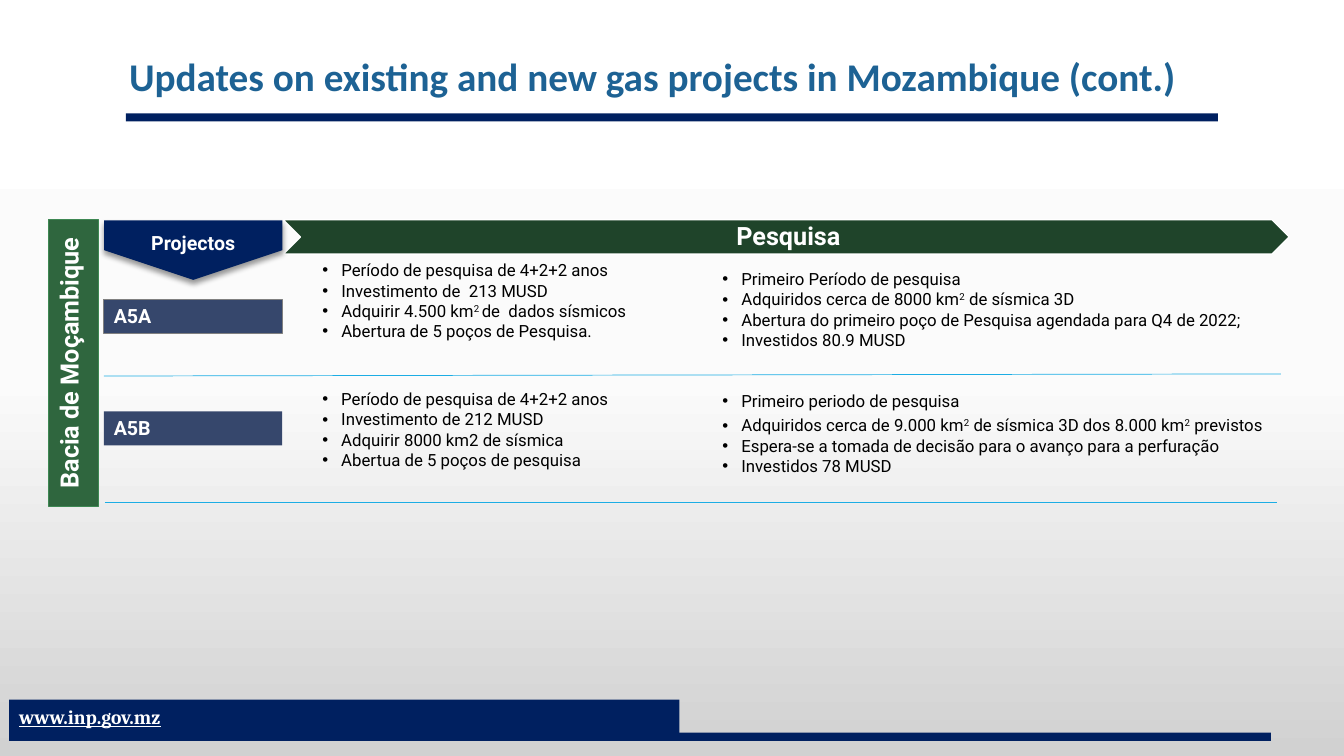
from copy import deepcopy

from lxml.etree import SubElement
from pptx import Presentation
from pptx.dml.color import RGBColor
from pptx.enum.shapes import MSO_CONNECTOR as Connector, MSO_SHAPE as Shape
from pptx.enum.text import MSO_ANCHOR as Anchor, MSO_AUTO_SIZE as AutoSize, PP_ALIGN as Align
from pptx.oxml.ns import qn
from pptx.util import Pt

NAVY, SLATE, GREEN, DARK_GREEN = "002060", "36476C", "2F663E", "1F442A"
WHITE, BLACK, GREY, SKY = "FFFFFF", "000000", "808080", "1CADE4"
BODY_FONT = "Roboto"
PLANNED_LEFT, PROGRESS_LEFT = 223.2, 509

# Text between carets is superscript.
PROJECTS = [
    {
        "name": "A5A", "label_top": 213.8, "outline": GREY,
        "lists": [
            (PLANNED_LEFT, 182.2, 264, 1, [
                "Período de pesquisa de 4+2+2 anos",
                "Investimento de  213 MUSD",
                "Adquirir 4.500 km^2 ^de  dados sísmicos",
                "Abertura de 5 poços de Pesquisa."]),
            (PROGRESS_LEFT, 188.6, 403, 1, [
                "Primeiro Período de pesquisa",
                "Adquiridos cerca de 8000 km^2^ de sísmica 3D",
                "Abertura do primeiro poço de Pesquisa agendada para Q4 de 2022;",
                "Investidos 80.9 MUSD"]),
        ],
    },
    {
        "name": "A5B", "label_top": 293.8, "outline": None,
        "lists": [
            (PLANNED_LEFT, 274.3, 232, 1, [
                "Período de pesquisa de 4+2+2 anos",
                "Investimento de 212 MUSD",
                "Adquirir 8000 km2 de sísmica",
                "Abertua de 5 poços de pesquisa"]),
            (PROGRESS_LEFT, 272.9, 447, 1.2, [
                "Primeiro periodo de pesquisa",
                "Adquiridos cerca de 9.000 km^2^ de sísmica 3D dos 8.000 km^2^ previstos",
                "Espera-se a tomada de decisão para o avanço para a perfuração",
                "Investidos 78 MUSD"]),
        ],
    },
]


def color(hex_code):
    return RGBColor.from_string(hex_code)


def style_font(font, size, hex_code, name=BODY_FONT, bold=True):
    font.size, font.name, font.bold = Pt(size), name, bold
    font.color.rgb = color(hex_code)


def add_block(slide, kind, left, top, width, height, fill, outline=None, weight=0.75):
    shape = slide.shapes.add_shape(kind, Pt(left), Pt(top), Pt(width), Pt(height))
    shape.shadow.inherit = False
    shape.fill.solid()
    shape.fill.fore_color.rgb = color(fill)
    if outline:
        shape.line.color.rgb = color(outline)
        shape.line.width = Pt(weight)
    else:
        shape.line.fill.background()
    return shape


def write_label(shape, text, size, align=Align.LEFT, anchor=Anchor.TOP, name=BODY_FONT):
    frame = shape.text_frame
    frame.text = text
    frame.word_wrap = True
    frame.vertical_anchor = anchor
    paragraph = frame.paragraphs[0]
    paragraph.alignment = align
    style_font(paragraph.runs[0].font, size, WHITE, name)
    return paragraph


def turn_text_upward(shape):
    shape.text_frame._txBody.bodyPr.set("vert", "vert270")


def add_soft_shadow(shape):
    effects = shape._element.spPr.find(qn("a:effectLst"))
    shadow = SubElement(effects, qn("a:outerShdw"), blurRad=str(Pt(4)), dist=str(Pt(3)),
                        dir="5400000", algn="t", rotWithShape="0")
    tint = SubElement(shadow, qn("a:srgbClr"), val=BLACK)
    SubElement(tint, qn("a:alpha"), val="40000")


def add_divider(slide, x1, y1, x2, y2):
    line = slide.shapes.add_connector(Connector.STRAIGHT, Pt(x1), Pt(y1), Pt(x2), Pt(y2))
    line.line.color.rgb = color(SKY)
    line.line.width = Pt(0.5)
    SubElement(line._element.spPr, qn("a:effectLst"))


def add_bullet(paragraph):
    properties = paragraph._p.get_or_add_pPr()
    properties.set("marL", str(Pt(13.5)))
    properties.set("indent", str(-Pt(13.5)))
    SubElement(properties, qn("a:buFont"), typeface="Arial")
    SubElement(properties, qn("a:buChar"), char="•")


def add_bullet_list(slide, left, top, width, lead_spacing, items):
    """lead_spacing is the line spacing of the first two items."""
    box = slide.shapes.add_textbox(Pt(left), Pt(top), Pt(width), Pt(65.5))
    frame = box.text_frame
    frame.word_wrap = True
    for index, item in enumerate(items):
        paragraph = frame.add_paragraph() if index else frame.paragraphs[0]
        add_bullet(paragraph)
        if index < 2:
            paragraph.line_spacing = lead_spacing
        for part, text in enumerate(item.split("^")):
            run = paragraph.add_run()
            run.text = text
            style_font(run.font, 12, BLACK, bold=False)
            if part % 2:
                run.font._element.set("baseline", "30000")


def set_background(slide):
    fill = slide.background.fill
    fill.gradient()
    fill.gradient_angle = 270
    stop_list = slide._element.find(".//" + qn("a:gsLst"))
    stop_list.append(deepcopy(stop_list[0]))
    for stop, position, shade in zip(fill.gradient_stops, (0, 0.5, 1), (WHITE, "FBFBFB", "D1D1D1")):
        stop.position = position
        stop.color.rgb = color(shade)


def set_title(slide, text):
    title = slide.shapes.title
    title.left, title.top, title.width, title.height = Pt(85), Pt(33.8), Pt(769), Pt(41)
    frame = title.text_frame
    paragraph = write_label(title, text, 28, name="Calibri")
    paragraph.runs[0].font.color.rgb = color("1D6294")
    frame.auto_size = AutoSize.NONE


def add_footer(slide):
    add_block(slide, Shape.RECTANGLE, 6.5, 523.4, 901.4, 5.8, NAVY)
    band = add_block(slide, Shape.RECTANGLE, 6.5, 499.7, 478.8, 24.5, NAVY)
    address = write_label(band, "www.inp.gov.mz", 14, name="Cambria")
    address.runs[0].font.underline = True


def add_headers(slide):
    add_block(slide, Shape.CHEVRON, 202.3, 157, 718.6, 24.5, DARK_GREEN, WHITE, 1)
    caption = slide.shapes.add_textbox(Pt(213.8), Pt(157), Pt(694.8), Pt(24.5))
    frame = caption.text_frame
    frame.margin_left = Pt(6)
    frame.margin_top = frame.margin_right = frame.margin_bottom = Pt(2)
    write_label(caption, "Pesquisa", 18, Align.CENTER, Anchor.MIDDLE).line_spacing = 0.9

    basin = add_block(slide, Shape.RECTANGLE, 34.6, 157, 36, 204.5, GREEN, "3E8853", 0.5)
    write_label(basin, "Bacia de Moçambique", 18, Align.CENTER)
    turn_text_upward(basin)

    pointer = add_block(slide, Shape.PENTAGON, 116.8, 115, 42.5, 127.4, NAVY)
    pointer.rotation = 90
    add_soft_shadow(pointer)
    write_label(pointer, "Projectos", 14, Align.CENTER, Anchor.MIDDLE)
    turn_text_upward(pointer)


def add_project(slide, project):
    label = add_block(slide, Shape.RECTANGLE, 74.2, project["label_top"], 127.4, 24.3,
                      SLATE, project["outline"])
    write_label(label, project["name"], 14)
    for bullet_list in project["lists"]:
        add_bullet_list(slide, *bullet_list)


def main():
    presentation = Presentation()
    presentation.slide_width, presentation.slide_height = Pt(960), Pt(540)
    slide = presentation.slides.add_slide(presentation.slide_layouts[5])
    set_background(slide)
    set_title(slide, "Updates on existing and new gas projects in Mozambique (cont.)")
    add_block(slide, Shape.RECTANGLE, 90, 80.9, 780, 5.8, NAVY)
    add_footer(slide)
    add_headers(slide)
    for project in PROJECTS:
        add_project(slide, project)
    add_divider(slide, 74.2, 268.6, 915, 267.1)
    add_divider(slide, 74.9, 358.6, 912.2, 358.6)
    presentation.save("out.pptx")


if __name__ == "__main__":
    main()
